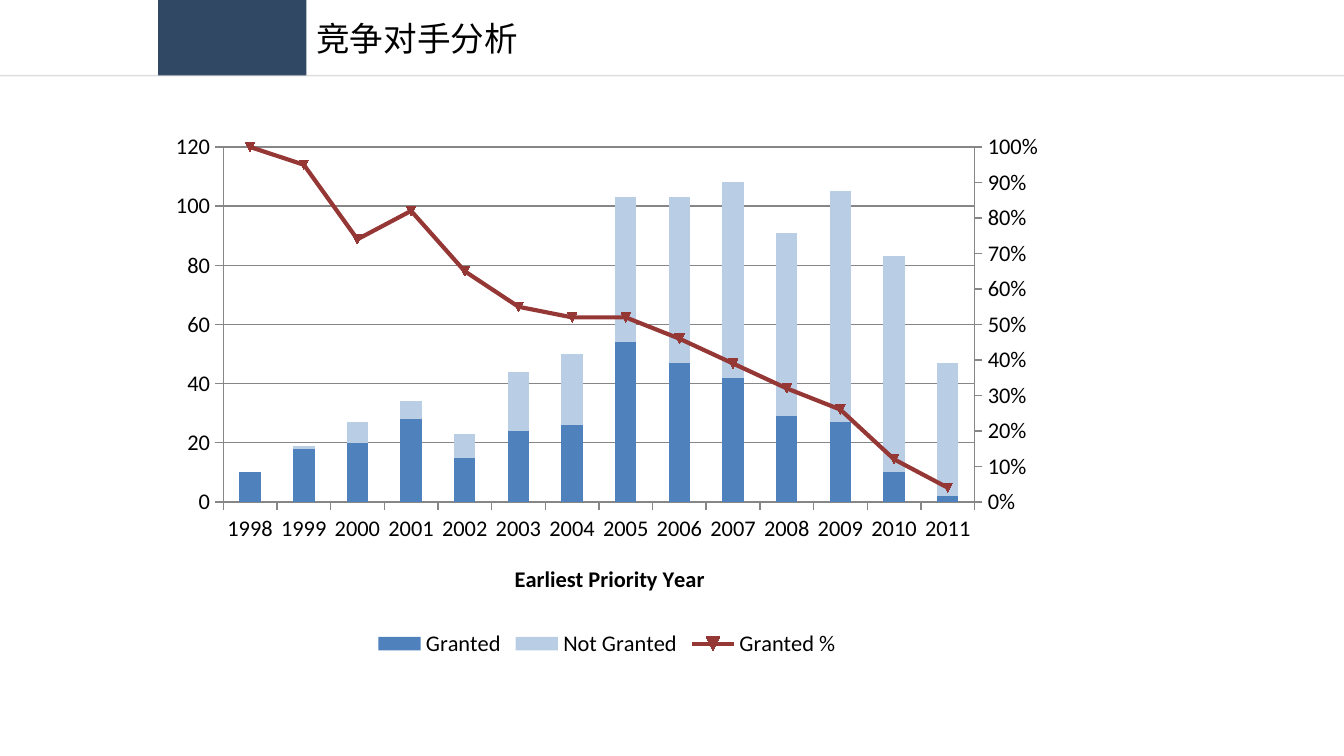
import copy
from dataclasses import dataclass

import pptx
import pptx.chart.axis
import pptx.chart.data
import pptx.dml.color
import pptx.enum.chart
import pptx.enum.shapes
import pptx.enum.text
import pptx.oxml
import pptx.oxml.ns
import pptx.util
from pptx.util import Cm


@dataclass(frozen=True)
class Theme:
    font: str = "Calibri"
    title_size: int = 18
    chart_size: int = 12
    text: str = "000000"
    block: str = "314865"
    rule: str = "BFBFBF"
    axis: str = "868686"
    granted: str = "4F81BD"
    not_granted: str = "B9CDE5"
    share: str = "953735"
    marker: str = "C0504D"


THEME = Theme()
YEARS = [str(year) for year in range(1998, 2012)]
GRANTED = [10, 18, 20, 28, 15, 24, 26, 54, 47, 42, 29, 27, 10, 2]
NOT_GRANTED = [None, 1, 7, 6, 8, 20, 24, 49, 56, 66, 62, 78, 73, 45]
SHARE = [1, 0.95, 0.74, 0.82, 0.65, 0.55, 0.52, 0.52, 0.46, 0.39, 0.32, 0.26, 0.12, 0.04]


def rgb(value):
    return pptx.dml.color.RGBColor.from_string(value)


def make_element(tag, **attributes):
    values = "".join(f' {name}="{value}"' for name, value in attributes.items())
    prefix = tag.split(":")[0]
    return pptx.oxml.parse_xml(f"<{tag} {pptx.oxml.ns.nsdecls(prefix)}{values}/>")


def style_font(font, size, bold=False):
    font.name = THEME.font
    font.size = pptx.util.Pt(size)
    font.bold = bold
    font.color.rgb = rgb(THEME.text)


def style_line(line, color, width=0.75):
    line.color.rgb = rgb(color)
    line.width = pptx.util.Pt(width)


def add_header(slide, left, top, width, height):
    block_left, block_width = left + Cm(2.99), Cm(2.8)
    block = slide.shapes.add_shape(
        pptx.enum.shapes.MSO_SHAPE.RECTANGLE, block_left, top, block_width, height)
    block.shadow.inherit = False
    block.fill.solid()
    block.fill.fore_color.rgb = rgb(THEME.block)
    block.line.fill.background()

    rule = slide.shapes.add_connector(
        pptx.enum.shapes.MSO_CONNECTOR.STRAIGHT,
        left, top + height, left + width, top + height)
    style_line(rule.line, THEME.rule)
    rule.line._ln.xpath(".//a:srgbClr")[0].append(make_element("a:alpha", val=50000))
    rule._element.spPr.append(make_element("a:effectLst"))

    title_left = block_left + block_width
    title = slide.shapes.add_textbox(title_left, top + Cm(0.11), Cm(17.15), height - Cm(0.2))
    frame = title.text_frame
    frame.word_wrap = True
    frame.vertical_anchor = pptx.enum.text.MSO_ANCHOR.MIDDLE
    frame.margin_left = frame.margin_right = Cm(0.19)
    frame.margin_top = frame.margin_bottom = Cm(0.1)
    run = frame.paragraphs[0].add_run()
    run.text = "竞争对手分析"
    style_font(run.font, THEME.title_size)


def move_last_series_to_right_axis(chart):
    plot_area = chart._chartSpace.chart.plotArea
    bars = plot_area.xpath("c:barChart")[0]
    series = bars.xpath("c:ser")[-1]
    for flag in series.xpath("c:invertIfNegative"):
        series.remove(flag)

    lines = make_element("c:lineChart")
    lines.append(make_element("c:grouping", val="standard"))
    lines.append(make_element("c:varyColors", val=0))
    lines.append(series)
    lines.append(make_element("c:marker", val=1))
    bars.addnext(lines)

    category_axis = plot_area.xpath("c:catAx")[0]
    value_axis = plot_area.xpath("c:valAx")[0]
    right_categories = copy.deepcopy(category_axis)
    right_values = copy.deepcopy(value_axis)
    value_axis.addnext(right_values)
    right_values.addnext(right_categories)
    for axis, own, other in ((right_categories, 101, 102), (right_values, 102, 101)):
        axis.xpath("c:axId")[0].set("val", str(own))
        axis.xpath("c:crossAx")[0].set("val", str(other))
        lines.append(make_element("c:axId", val=own))
    right_categories.xpath("c:delete")[0].set("val", "1")
    right_values.xpath("c:axPos")[0].set("val", "r")
    right_values.xpath("c:crosses")[0].set("val", "max")
    return pptx.chart.axis.ValueAxis(right_values)


def set_layout(parent, index, target=None, **fractions):
    for old_layout in parent.xpath("c:layout"):
        parent.remove(old_layout)
    layout, manual = make_element("c:layout"), make_element("c:manualLayout")
    layout.append(manual)
    if target:
        manual.append(make_element("c:layoutTarget", val=target))
    for mode in ("xMode", "yMode"):
        manual.append(make_element(f"c:{mode}", val="edge"))
    for name, value in fractions.items():
        manual.append(make_element(f"c:{name}", val=value))
    parent.insert(index, layout)


def style_axis(axis, number_format, maximum=None, step=None):
    axis.major_tick_mark = pptx.enum.chart.XL_TICK_MARK.OUTSIDE
    axis.minor_tick_mark = pptx.enum.chart.XL_TICK_MARK.NONE
    style_line(axis.format.line, THEME.axis)
    style_font(axis.tick_labels.font, THEME.chart_size)
    axis.tick_labels.number_format = number_format
    axis.tick_labels.number_format_is_linked = False
    if maximum is not None:
        axis.minimum_scale = 0
        axis.maximum_scale = maximum
        axis.major_unit = step


def add_grant_chart(slide, left, top, width, height):
    data = pptx.chart.data.CategoryChartData()
    data.categories = YEARS
    data.add_series("Granted", GRANTED)
    data.add_series("Not Granted", NOT_GRANTED)
    data.add_series("Granted %", SHARE, number_format="0%")
    chart = slide.shapes.add_chart(
        pptx.enum.chart.XL_CHART_TYPE.COLUMN_STACKED, left, top, width, height, data).chart
    chart.has_title = False
    style_font(chart.font, THEME.chart_size)

    left_axis, category_axis = chart.value_axis, chart.category_axis
    right_axis = move_last_series_to_right_axis(chart)
    right_axis.has_major_gridlines = False
    style_axis(right_axis, "0%", 1, 0.1)
    style_axis(left_axis, "General", 120, 20)
    left_axis.has_major_gridlines = True
    style_line(left_axis.major_gridlines.format.line, THEME.axis)
    style_axis(category_axis, "General")
    axis_title = category_axis.axis_title
    run = axis_title.text_frame.paragraphs[0].add_run()
    run.text = "Earliest Priority Year"
    style_font(run.font, THEME.chart_size, bold=True)
    set_layout(axis_title._element, 1, x=Cm(6.65) / width, y=Cm(8.28) / height)

    columns, lines = chart.plots
    columns.gap_width = 150
    columns.overlap = 100
    columns.vary_by_categories = False
    for series, color in zip(columns.series, (THEME.granted, THEME.not_granted)):
        series.format.fill.solid()
        series.format.fill.fore_color.rgb = rgb(color)

    share = lines.series[0]
    share.smooth = False
    style_line(share.format.line, THEME.share, 2.25)
    share.marker.size = 5
    share.marker.format.fill.solid()
    share.marker.format.fill.fore_color.rgb = rgb(THEME.marker)
    style_line(share.marker.format.line, THEME.share)

    chart.has_legend = True
    chart.legend.position = pptx.enum.chart.XL_LEGEND_POSITION.BOTTOM
    chart.legend.include_in_layout = False
    style_font(chart.legend.font, THEME.chart_size)
    set_layout(chart._chartSpace.chart.plotArea, 0, "inner",
               x=Cm(1.22) / width, y=Cm(0.47) / height,
               w=Cm(14.2) / width, h=Cm(6.71) / height)


def main():
    presentation = pptx.Presentation()
    presentation.slide_width = Cm(25.4)
    presentation.slide_height = Cm(14.29)
    slide = presentation.slides.add_slide(presentation.slide_layouts[6])
    add_header(slide, 0, 0, presentation.slide_width, Cm(1.43))
    add_grant_chart(slide, Cm(3), Cm(2.31), Cm(16.94), Cm(10.21))
    presentation.save("out.pptx")


if __name__ == "__main__":
    main()
